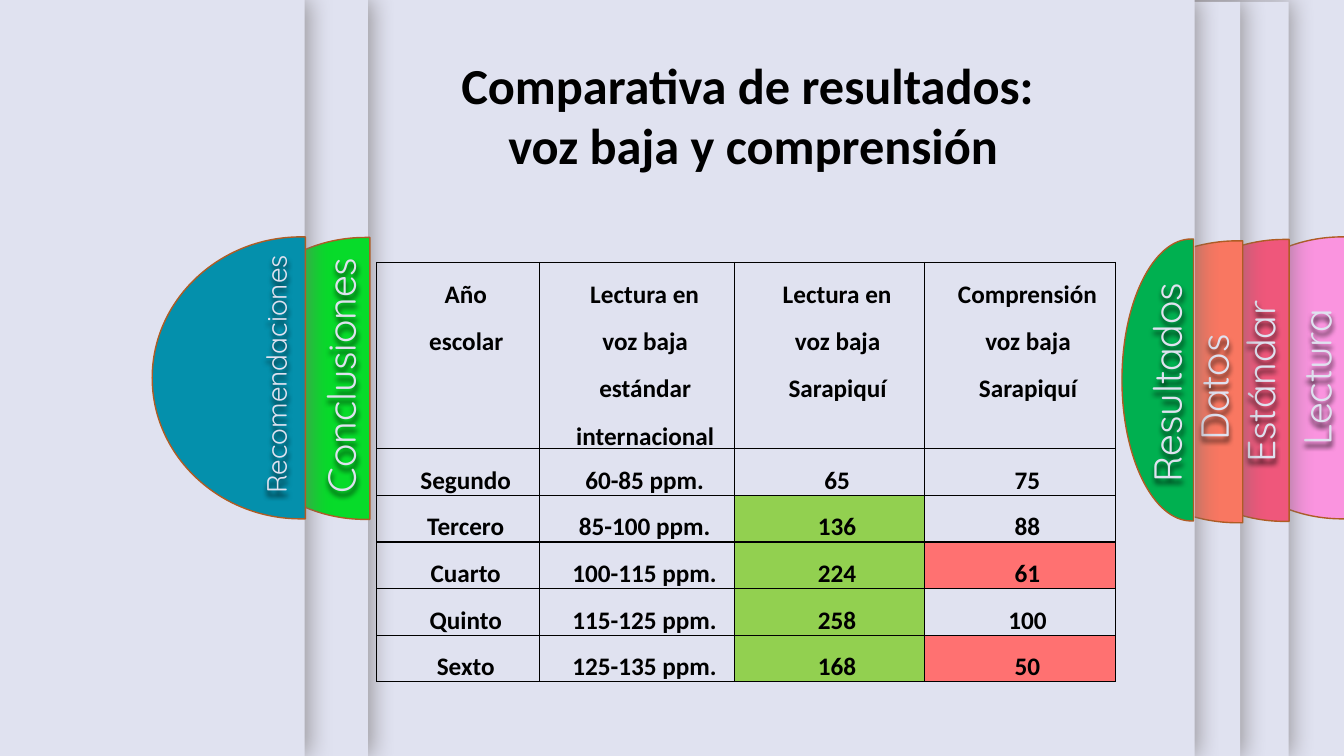
from pptx import Presentation
from pptx.dml.color import RGBColor
from pptx.enum.shapes import MSO_SHAPE as Shape
from pptx.enum.text import MSO_ANCHOR as Anchor, PP_ALIGN as Align
from pptx.oxml import parse_xml
from pptx.oxml.ns import nsdecls
from pptx.util import Pt

SLIDE_WIDTH, SLIDE_HEIGHT = 960, 540
TAB_HEIGHT = 201.4
TABS = [
    ("Lectura", "FA94DF", 960, 0, (852.5, 169.2, 109.4), (940.7, 269.6), 28),
    ("Estándar", "EF577B", 920.5, 1.4, (811.4, 171, 109.4), (900.4, 272.5), 28),
    ("Datos", "F97761", 885.8, 1.4, (774.7, 172, 113), (867.2, 276.8), 28),
    ("Resultados", "00B050", 853.4, 0, (801.4, 170.7, 51.1), (833.7, 273.2), 28),
    ("Conclusiones", "07DB2A", 262.8, 0, (154.8, 169.6, 109.4), (243.7, 268.2), 28),
    ("Recomendaciones", "0490AC", 217.7, 0, (108.7, 169.2, 109.4), (197.3, 267.5), 20),
]
RESULTS = [
    ["Año escolar", "Lectura en voz baja estándar internacional",
     "Lectura en voz baja Sarapiquí", "Comprensión voz baja Sarapiquí"],
    ["Segundo", "60-85 ppm.", "65", "75"],
    ["Tercero", "85-100 ppm.", "136", "88"],
    ["Cuarto", "100-115 ppm.", "224", "61"],
    ["Quinto", "115-125 ppm.", "258", "100"],
    ["Sexto", "125-135 ppm.", "168", "50"],
]
GREEN, RED = "92D050", "FF7171"
HIGHLIGHTS = {(2, 2): GREEN, (3, 2): GREEN, (4, 2): GREEN, (5, 2): GREEN,
              (3, 3): RED, (5, 3): RED}


def color(code):
    return RGBColor.from_string(code)


def write(frame, text, font="Calibri", size=18, ink="000000", bold=False, spacing=None):
    frame.text = text
    for paragraph in frame.paragraphs:
        paragraph.alignment = Align.CENTER
        if spacing:
            paragraph.line_spacing = spacing
        for run in paragraph.runs:
            run.font.name, run.font.size, run.font.bold = font, Pt(size), bold
            run.font.color.rgb = color(ink)


def cast_shadow(shape, tint, opacity, blur, distance, angle):
    shape.shadow.inherit = False
    effects = shape._element.spPr.find("{*}effectLst")
    effects.append(parse_xml(
        f'<a:outerShdw {nsdecls("a")} blurRad="{Pt(blur)}" dist="{Pt(distance)}" '
        f'dir="{angle * 60000}" algn="ctr" rotWithShape="0"><a:srgbClr val="{tint}">'
        f'<a:alpha val="{opacity * 1000}"/></a:srgbClr></a:outerShdw>'))


def bend(segment, points):
    marks = "".join(f'<a:pt x="{Pt(x)}" y="{Pt(y)}"/>' for x, y in points)
    curve = parse_xml(f'<a:cubicBezTo {nsdecls("a")}>{marks}</a:cubicBezTo>')
    segment.getparent().replace(segment, curve)


class TabbedSlide:
    """A slide of stacked panels with round index tabs."""

    paper, outline, border = "E0E2F0", "AF5C24", "000000"

    def __init__(self, slide):
        self.slide, self.shapes = slide, slide.shapes

    def title(self, text, left, top, width, height):
        heading = self.shapes.title
        heading.left, heading.top = Pt(left), Pt(top)
        heading.width, heading.height = Pt(width), Pt(height)
        heading.text_frame.word_wrap = True
        heading.text_frame.vertical_anchor = Anchor.TOP
        write(heading.text_frame, text, size=36, bold=True)
        self.shapes._spTree.append(heading._element)

    def panel(self, right, top):
        sheet = self.shapes.add_shape(Shape.RECTANGLE, Pt(right - SLIDE_WIDTH), Pt(top),
                                      Pt(SLIDE_WIDTH), Pt(SLIDE_HEIGHT))
        sheet.fill.solid()
        sheet.fill.fore_color.rgb = color(self.paper)
        sheet.line.fill.background()
        cast_shadow(sheet, "767171", 65, 17, 3, 0)

    def tab(self, fill, left, top, width):
        flat, middle = width * 0.97, TAB_HEIGHT / 2
        near, far = flat * 0.45, middle * 0.45
        corners = [(width, TAB_HEIGHT), (flat, TAB_HEIGHT), (0, middle), (flat, 0)]
        builder = self.shapes.build_freeform(Pt(left + width), Pt(top))
        builder.add_line_segments([(Pt(left + x), Pt(top + y)) for x, y in corners], close=True)
        half_round = builder.convert_to_shape()
        lower, upper = list(half_round._element.spPr.iter("{*}lnTo"))[2:4]
        bend(lower, [(near, TAB_HEIGHT), (0, TAB_HEIGHT - far), (0, middle)])
        bend(upper, [(0, far), (near, 0), (flat, 0)])
        half_round.shadow.inherit = False
        half_round.fill.solid()
        half_round.fill.fore_color.rgb = color(fill)
        half_round.line.color.rgb = color(self.outline)
        half_round.line.width = Pt(1)

    def label(self, text, center_x, center_y, size, width=200):
        height = size * 1.25 + 7
        caption = self.shapes.add_textbox(Pt(center_x - width / 2), Pt(center_y - height / 2),
                                          Pt(width), Pt(height))
        caption.rotation = 270
        caption.text_frame.word_wrap = True
        write(caption.text_frame, text, font="Quicksand", size=size, ink=self.paper)
        cast_shadow(caption, "000000", 80, 4, 3, 90)

    def table(self, rows, left, top, widths, heights, highlights):
        grid = self.shapes.add_table(len(rows), len(widths), Pt(left), Pt(top),
                                     Pt(sum(widths)), Pt(sum(heights))).table
        grid.first_row = grid.horz_banding = False
        for column, width in zip(grid.columns, widths):
            column.width = Pt(width)
        for r, (texts, height) in enumerate(zip(rows, heights)):
            grid.rows[r].height = Pt(height)
            for c, text in enumerate(texts):
                self.cell(grid.cell(r, c), text, highlights.get((r, c)))

    def cell(self, cell, text, fill):
        cell.margin_left = cell.margin_right = Pt(5)
        cell.margin_top = cell.margin_bottom = 0
        write(cell.text_frame, text, bold=True, spacing=1.54)
        indents = cell.text_frame.paragraphs[0]._p.get_or_add_pPr()
        for name, length in (("marL", 17.5), ("marR", 6), ("indent", -0.7)):
            indents.set(name, str(Pt(length)))
        for side in "LRTB":
            cell._tc.get_or_add_tcPr().append(parse_xml(
                f'<a:ln{side} {nsdecls("a")} w="{Pt(1)}"><a:solidFill>'
                f'<a:srgbClr val="{self.border}"/></a:solidFill></a:ln{side}>'))
        if fill:
            cell.fill.solid()
            cell.fill.fore_color.rgb = color(fill)
        else:
            cell.fill.background()


def main():
    deck = Presentation()
    deck.slide_width, deck.slide_height = Pt(SLIDE_WIDTH), Pt(SLIDE_HEIGHT)
    page = TabbedSlide(deck.slides.add_slide(deck.slide_layouts[5]))
    for name, fill, edge, top, outline, center, size in TABS:
        page.panel(edge, top)
        page.tab(fill, *outline)
        page.label(name, *center, size)
    page.table(RESULTS, 269, 187.5, [116.6, 139, 136, 136], [88.6] + [27.4] * 5, HIGHLIGHTS)
    page.title("Comparativa de resultados: \nvoz baja y comprensión", 293, 35, 490.3, 94.3)
    deck.save("out.pptx")


if __name__ == "__main__":
    main()
